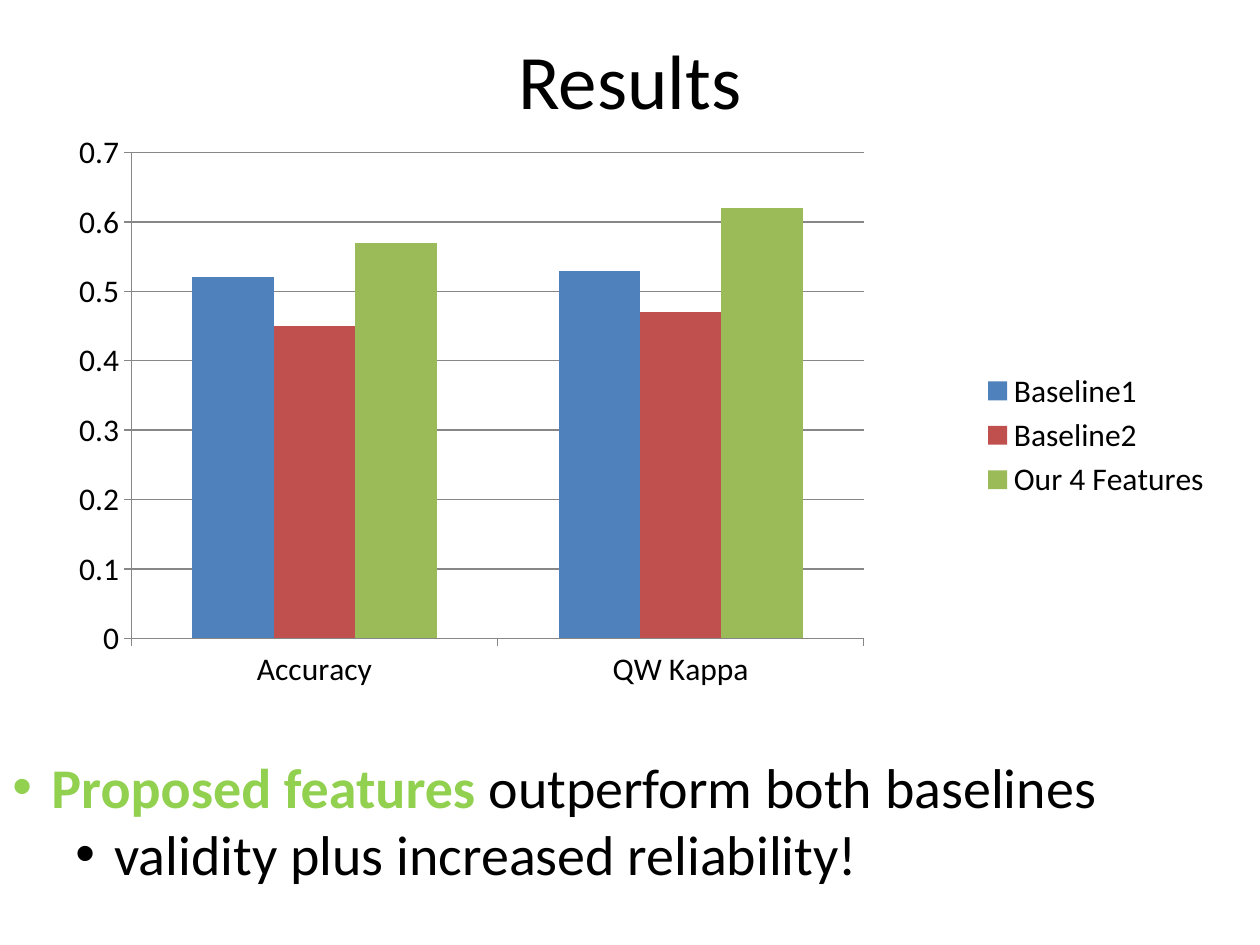
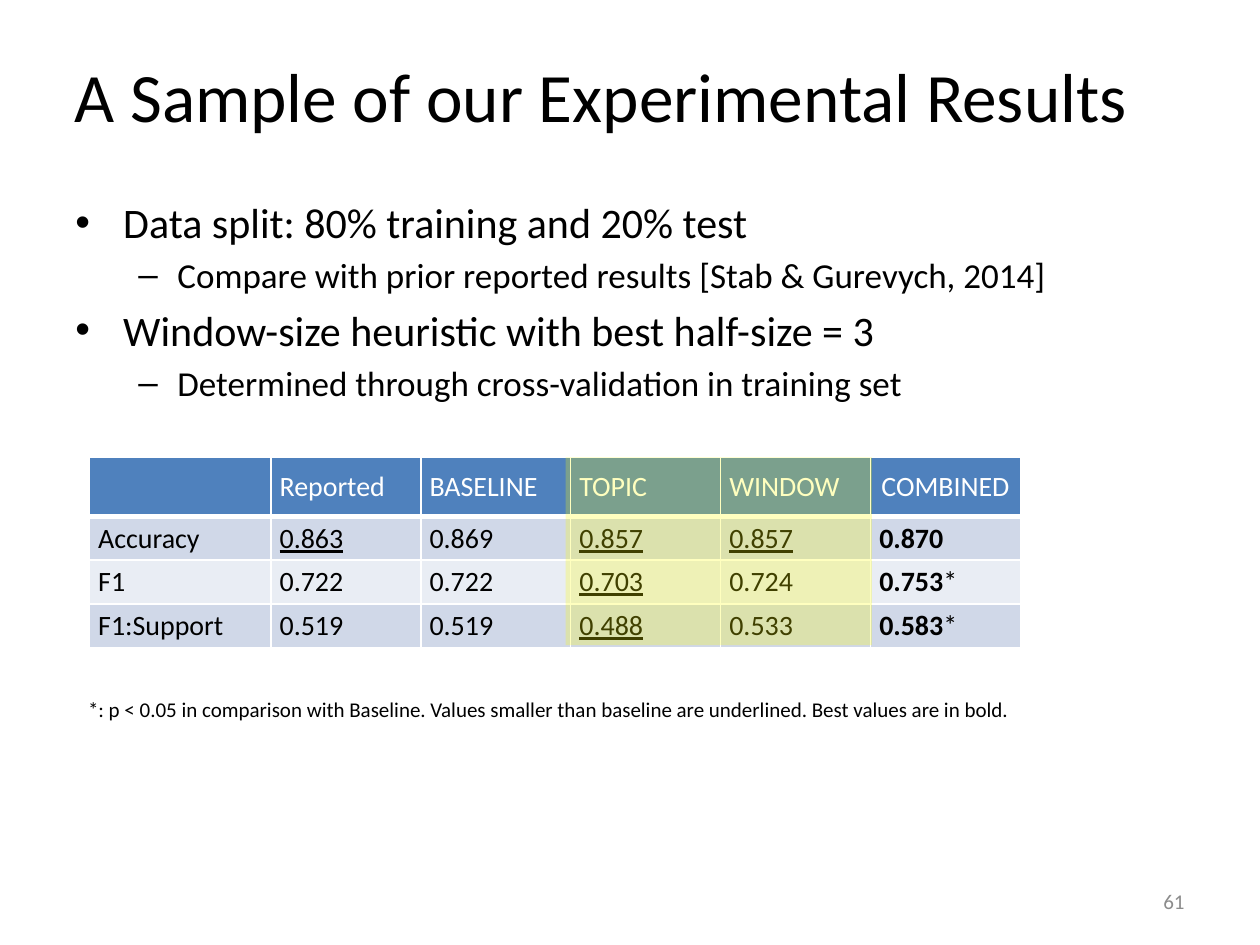
from lxml import etree
from pptx import Presentation, util as u
from pptx.chart.data import CategoryChartData
from pptx.dml.color import RGBColor
from pptx.enum import chart as ch, shapes, text
from pptx.oxml.ns import qn

FONT = "Calibri"
BLACK, WHITE, GREY = "000000", "FFFFFF", "878787"
BLUE, RED, GREEN = "4F81BD", "C0504D", "9BBB59"
LEFT, MID, RIGHT = text.PP_ALIGN.LEFT, text.PP_ALIGN.CENTER, text.PP_ALIGN.RIGHT
rgb = RGBColor.from_string


def write(para, words, size=16, tint=BLACK, bold=False, under=False, align=LEFT):
    para.alignment = align
    run = para.add_run()
    run.text = words
    font = run.font
    font.name, font.size = FONT, u.Pt(size)
    font.bold, font.underline = bold, under
    font.color.rgb = rgb(tint)


def frame(page, left, top, wide, high, anchor=text.MSO_ANCHOR.MIDDLE):
    box = page.shapes.add_textbox(*map(u.Inches, (left, top, wide, high)))
    body = box.text_frame
    body.word_wrap = True
    body.vertical_anchor = anchor
    return body


deck = Presentation()
deck.slide_width, deck.slide_height = u.Inches(10), u.Inches(7.5)
pages = []
for title, left, top, size in [
    ("Results", 0.5, 0, 44),
    ("A Sample of our Experimental Results", 0.27, 0.13, 39.6),
]:
    page = deck.slides.add_slide(deck.slide_layouts[6])
    head = frame(page, left, top, 9, 1.25)
    write(head.paragraphs[0], title, size=size, align=MID)
    pages.append(page)
first, second = pages

data = CategoryChartData()
data.categories = ["Accuracy", "QW Kappa"]
bars = [
    ("Baseline1", (0.52, 0.53), BLUE),
    ("Baseline2", (0.45, 0.47), RED),
    ("Our 4 Features", (0.57, 0.62), GREEN),
]
for name, vals, tint in bars:
    data.add_series(name, vals)
spot = map(u.Inches, (0.39, 0.99, 9.33, 4.93))
chart = first.shapes.add_chart(ch.XL_CHART_TYPE.COLUMN_CLUSTERED, *spot, data).chart
chart.has_title = False
chart.font.name, chart.font.size = FONT, u.Pt(18)
chart.font.color.rgb = rgb(BLACK)
chart.has_legend = True
chart.legend.position = ch.XL_LEGEND_POSITION.RIGHT
chart.legend.include_in_layout = False
plot = chart.plots[0]
plot.gap_width = 150
plot.vary_by_categories = False
for series, (name, vals, tint) in zip(plot.series, bars):
    series.format.fill.solid()
    series.format.fill.fore_color.rgb = rgb(tint)
scale = chart.value_axis
scale.minimum_scale, scale.maximum_scale, scale.major_unit = 0, 0.7, 0.1
scale.has_major_gridlines = True
for axis in (scale, chart.category_axis):
    axis.major_tick_mark = ch.XL_TICK_MARK.OUTSIDE
    axis.minor_tick_mark = ch.XL_TICK_MARK.NONE
for part in (scale, chart.category_axis, scale.major_gridlines):
    part.format.line.color.rgb = rgb(GREY)
    part.format.line.width = u.Pt(0.75)

area = plot._element.getparent()
for old in area.findall(qn("c:layout")):
    area.remove(old)
layout = etree.Element(qn("c:layout"))
area.insert(0, layout)
manual = etree.SubElement(layout, qn("c:manualLayout"))
for tag, val in [
    ("layoutTarget", "inner"), ("xMode", "edge"), ("yMode", "edge"),
    ("x", "0.07"), ("y", "0.045"), ("w", "0.623"), ("h", "0.782"),
]:
    etree.SubElement(manual, qn("c:" + tag)).set("val", val)

TOP = text.MSO_ANCHOR.TOP
claim = frame(first, 0, 5.92, 9.72, 1.18, TOP)
setup = frame(second, 0.5, 1.51, 9, 4.95, TOP)
lime = dict(tint="92D050", bold=True)
for body, level, mark, indent, hang, size, gap, runs in [
    (claim, 0, "•", 0.31, 0.31, 32, 0,
     [("Proposed features ", lime), ("outperform both baselines", {})]),
    (claim, 1, "•", 0.81, 0.31, 32, 0, [("validity plus increased reliability!", {})]),
    (setup, 0, "•", 0.38, 0.38, 24, 4.8, [("Data split: 80% training and 20% test", {})]),
    (setup, 1, "–", 0.81, 0.31, 20, 4,
     [("Compare with prior reported results [Stab & Gurevych, 2014]", {})]),
    (setup, 0, "•", 0.38, 0.38, 24, 4.8,
     [("Window-size heuristic with best half-size = 3", {})]),
    (setup, 1, "–", 0.81, 0.31, 20, 4,
     [("Determined through cross-validation in training set", {})]),
]:
    para = body.paragraphs[0]
    if para.runs:
        para = body.add_paragraph()
    para.level = level
    para.space_before = u.Pt(gap)
    for words, look in runs:
        write(para, words, size=size, **look)
    props = para._p.get_or_add_pPr()
    props.set("marL", str(u.Inches(indent)))
    props.set("indent", str(-u.Inches(hang)))
    etree.SubElement(props, qn("a:buFont")).set("typeface", "Arial")
    etree.SubElement(props, qn("a:buChar")).set("char", mark)

number = frame(second, 7.17, 6.95, 2.33, 0.4)
write(number.paragraphs[0], "61", size=12, tint="8C8C8C", align=RIGHT)

rows = [
    ["", "Reported", "BASELINE", "TOPIC", "WINDOW", "COMBINED"],
    ["Accuracy", "0.863", "0.869", "0.857", "0.857", "0.870"],
    ["F1", "0.722", "0.722", "0.703", "0.724", "0.753*"],
    ["F1:Support", "0.519", "0.519", "0.488", "0.533", "0.583*"],
]
fills = [BLUE, "D0D8E8", "E9EDF4", "D0D8E8"]
spot = map(u.Inches, (0.71, 3.63, 7.37, 1.49))
table = second.shapes.add_table(4, 6, *spot).table
for col, wide in zip(table.columns, [1.44] + [1.19] * 5):
    col.width = u.Inches(wide)
for row, high in zip(table.rows, [0.47] + [0.34] * 3):
    row.height = u.Inches(high)
for r, row in enumerate(rows):
    for c, words in enumerate(row):
        cell = table.cell(r, c)
        cell.fill.solid()
        cell.fill.fore_color.rgb = rgb(fills[r])
        cell.vertical_anchor = text.MSO_ANCHOR.MIDDLE
        cell.margin_left = cell.margin_right = u.Inches(0.07)
        cell.margin_top = cell.margin_bottom = u.Inches(0.04)
        para = cell.text_frame.paragraphs[0]
        if r == 0 and words:
            write(para, words, tint=WHITE, align=MID if c == 5 else LEFT)
        elif r:
            low = 0 < c < 5 and float(words) < float(row[2])
            write(para, words.rstrip("*"), bold=c == 5, under=low)
            if words.endswith("*"):
                write(para, "*")
        props = cell._tc.get_or_add_tcPr()
        for i, side in enumerate("LRTB"):
            thick = 3 if (r, side) in [(0, "B"), (1, "T")] else 1
            line = etree.Element(qn("a:ln" + side), w=str(u.Pt(thick)))
            solid = etree.SubElement(line, qn("a:solidFill"))
            etree.SubElement(solid, qn("a:srgbClr")).set("val", WHITE)
            props.insert(i, line)

note = frame(second, 0.6, 5.48, 7.55, 0.3)
write(note.paragraphs[0],
      "*: p < 0.05 in comparison with Baseline. Values smaller than baseline "
      "are underlined. Best values are in bold.", size=12)

spot = map(u.Inches, (4.49, 3.63, 2.43, 1.49))
glow = second.shapes.add_shape(shapes.MSO_SHAPE.RECTANGLE, *spot)
glow.shadow.inherit = False
glow.line.fill.background()
glow.fill.solid()
glow.fill.fore_color.rgb = rgb("FFFF00")
tint = glow._element.spPr.find(qn("a:solidFill"))[0]
etree.SubElement(tint, qn("a:alpha")).set("val", "25000")

deck.save("out.pptx")
